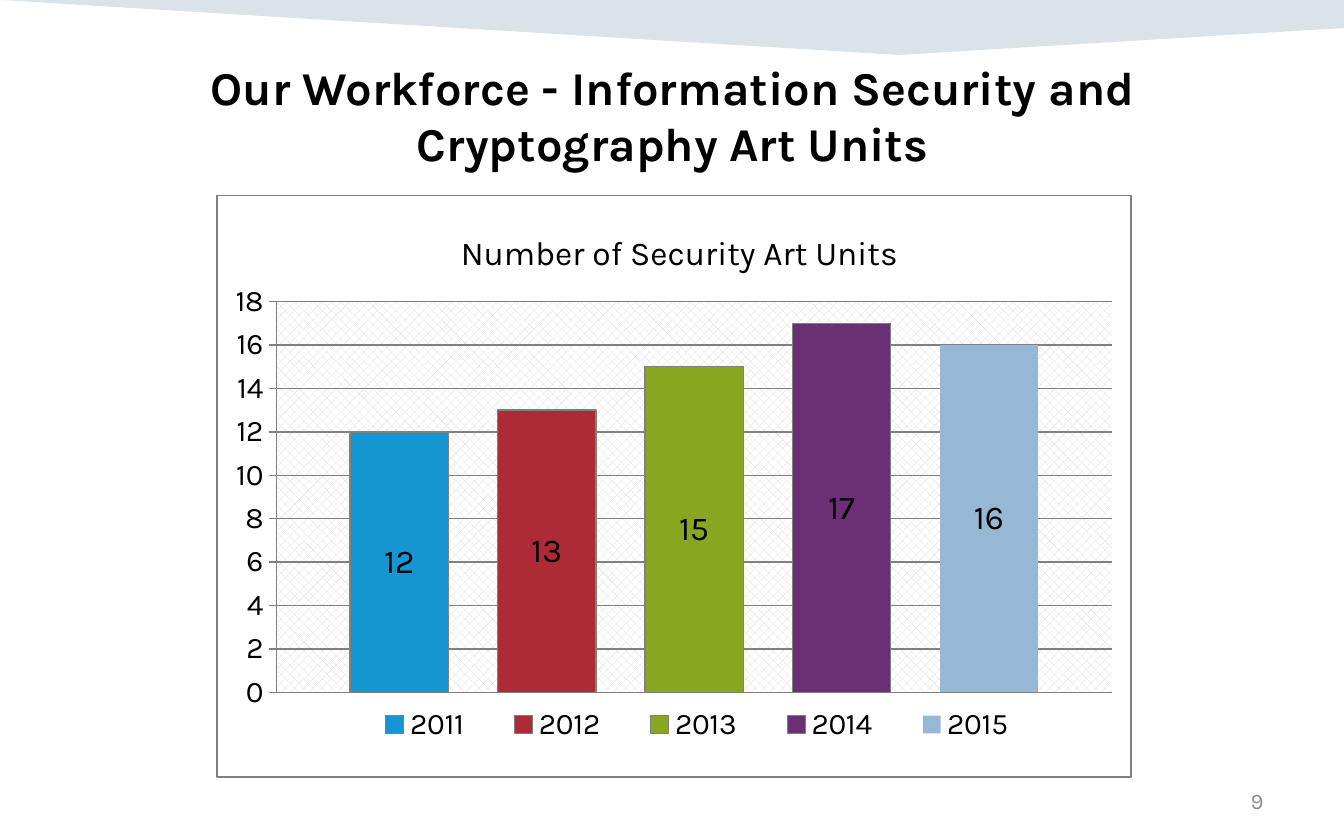
"""Build the slide on the number of security art units per year."""
import lxml.etree
import pptx
import pptx.chart.data
import pptx.dml.color
import pptx.enum.chart
import pptx.enum.text
import pptx.oxml
import pptx.oxml.ns
import pptx.util

Cm, Pt = pptx.util.Cm, pptx.util.Pt
RGBColor = pptx.dml.color.RGBColor
qn = pptx.oxml.ns.qn

theme = {
    "font": "Karla",
    "text": RGBColor.from_string("000000"),
    "muted": RGBColor.from_string("8C8C8C"),
    "line": RGBColor.from_string("808080"),
    "band": RGBColor.from_string("164469"),
    "title_size": Pt(25.2),
    "chart_size": Pt(18),
    "axis_size": Pt(16),
    "number_size": Pt(12),
    "line_width": Pt(0.75),
}
units_by_year = [
    ("2011", 12, "1596D1"),
    ("2012", 13, "AC2B37"),
    ("2013", 15, "88A620"),
    ("2014", 17, "6B2F75"),
    ("2015", 16, "97B8D4"),
]


def set_format(target, values):
    for name, value in values.items():
        setattr(target, name, value)


def place(parent, index, **fractions):
    for old_layout in parent.findall(qn("c:layout")):
        parent.remove(old_layout)
    layout = lxml.etree.Element(qn("c:layout"))
    manual = lxml.etree.SubElement(layout, qn("c:manualLayout"))
    if parent.tag == qn("c:plotArea"):
        lxml.etree.SubElement(manual, qn("c:layoutTarget")).set("val", "inner")
    for mode in ("xMode", "yMode"):
        lxml.etree.SubElement(manual, qn(f"c:{mode}")).set("val", "edge")
    for name, value in fractions.items():
        lxml.etree.SubElement(manual, qn(f"c:{name}")).set("val", str(value))
    parent.insert(index, layout)


presentation = pptx.Presentation()
set_format(presentation, {"slide_width": Cm(25.4), "slide_height": Cm(15.88)})
slide = presentation.slides.add_slide(presentation.slide_layouts[5])

builder = slide.shapes.build_freeform(0, 0)
builder.add_line_segments(
    [(Cm(25.4), 0), (Cm(25.4), Cm(0.53)), (Cm(16.99), Cm(1.04))], close=True
)
band = builder.convert_to_shape()
band.shadow.inherit = False
band.fill.solid()
band.fill.fore_color.rgb = theme["band"]
band.line.fill.background()
band_color = band.element.spPr.find(".//" + qn("a:srgbClr"))
lxml.etree.SubElement(band_color, qn("a:alpha")).set("val", "15000")
slide.shapes.element.insert(2, band.element)

title = slide.shapes.title
number = slide.shapes.add_textbox(Cm(18.21), Cm(14.71), Cm(5.92), Cm(0.84))
set_format(title, {"left": Cm(3.38), "top": Cm(0.94), "width": Cm(18.67), "height": Cm(2.46)})
for shape, text, alignment, size, color, bold in [
    (title, "Our Workforce - Information Security and Cryptography Art Units",
     pptx.enum.text.PP_ALIGN.CENTER, theme["title_size"], theme["text"], True),
    (number, "9", pptx.enum.text.PP_ALIGN.RIGHT, theme["number_size"], theme["muted"], False),
]:
    set_format(shape.text_frame, {
        "text": text,
        "word_wrap": True,
        "auto_size": pptx.enum.text.MSO_AUTO_SIZE.NONE,
        "vertical_anchor": pptx.enum.text.MSO_ANCHOR.MIDDLE,
        "margin_top": 0,
        "margin_bottom": 0,
    })
    paragraph = shape.text_frame.paragraphs[0]
    paragraph.alignment = alignment
    set_format(paragraph.font, {"name": theme["font"], "size": size, "bold": bold})
    paragraph.font.color.rgb = color

chart_data = pptx.chart.data.CategoryChartData()
chart_data.categories = ["1"]
for year, units, color in units_by_year:
    chart_data.add_series(year, [units])
chart = slide.shapes.add_chart(
    pptx.enum.chart.XL_CHART_TYPE.COLUMN_CLUSTERED,
    Cm(4.09), Cm(3.68), Cm(17.3), Cm(11.02), chart_data,
).chart
set_format(chart.font, {"name": theme["font"], "size": theme["chart_size"]})
chart.font.color.rgb = theme["text"]

chart.has_title = True
chart.chart_title.include_in_layout = False
chart.chart_title.text_frame.text = "Number of Security Art Units"
title_font = chart.chart_title.text_frame.paragraphs[0].font
set_format(title_font, {"name": theme["font"], "size": theme["chart_size"], "bold": False})
title_font.color.rgb = theme["text"]

chart.has_legend = True
set_format(chart.legend, {
    "position": pptx.enum.chart.XL_LEGEND_POSITION.BOTTOM,
    "include_in_layout": False,
})
chart.category_axis.visible = False
axis = chart.value_axis
set_format(axis, {
    "minimum_scale": 0,
    "maximum_scale": 18,
    "major_unit": 2,
    "major_tick_mark": pptx.enum.chart.XL_TICK_MARK.OUTSIDE,
    "has_major_gridlines": True,
})
for font in (chart.legend.font, axis.tick_labels.font):
    set_format(font, {"name": theme["font"], "size": theme["axis_size"]})
    font.color.rgb = theme["text"]

plot = chart.plots[0]
set_format(plot, {"gap_width": 150, "overlap": -50, "vary_by_categories": False})
outlines = [axis.format.line, axis.major_gridlines.format.line]
for series, (year, units, color) in zip(plot.series, units_by_year):
    series.format.fill.solid()
    series.format.fill.fore_color.rgb = RGBColor.from_string(color)
    set_format(series.data_labels, {
        "show_value": True,
        "position": pptx.enum.chart.XL_LABEL_POSITION.CENTER,
    })
    if year == "2015":
        series.format.line.fill.background()
    else:
        outlines.append(series.format.line)
for line in outlines:
    line.color.rgb = theme["line"]
    line.width = theme["line_width"]

chart_element = chart.element.find(qn("c:chart"))
plot_area = chart_element.find(qn("c:plotArea"))
place(chart_element.find(qn("c:title")), 1, x=0.26, y=0.05)
place(chart_element.find(qn("c:legend")), 1, x=0.14, y=0.87, w=0.77, h=0.08)
place(plot_area, 0, x=0.065, y=0.183, w=0.914, h=0.672)

namespaces = pptx.oxml.ns.nsdecls("c", "a")
plot_area.append(pptx.oxml.parse_xml(
    f'<c:spPr {namespaces}><a:pattFill prst="pct50">'
    '<a:fgClr><a:srgbClr val="D9D9D9"/></a:fgClr>'
    '<a:bgClr><a:srgbClr val="FFFFFF"/></a:bgClr></a:pattFill></c:spPr>'
))
chart_element.addnext(pptx.oxml.parse_xml(
    f'<c:spPr {namespaces}><a:noFill/><a:ln w="{theme["line_width"]}"><a:solidFill>'
    f'<a:srgbClr val="{theme["line"]}"/></a:solidFill></a:ln></c:spPr>'
))

presentation.save("out.pptx")
